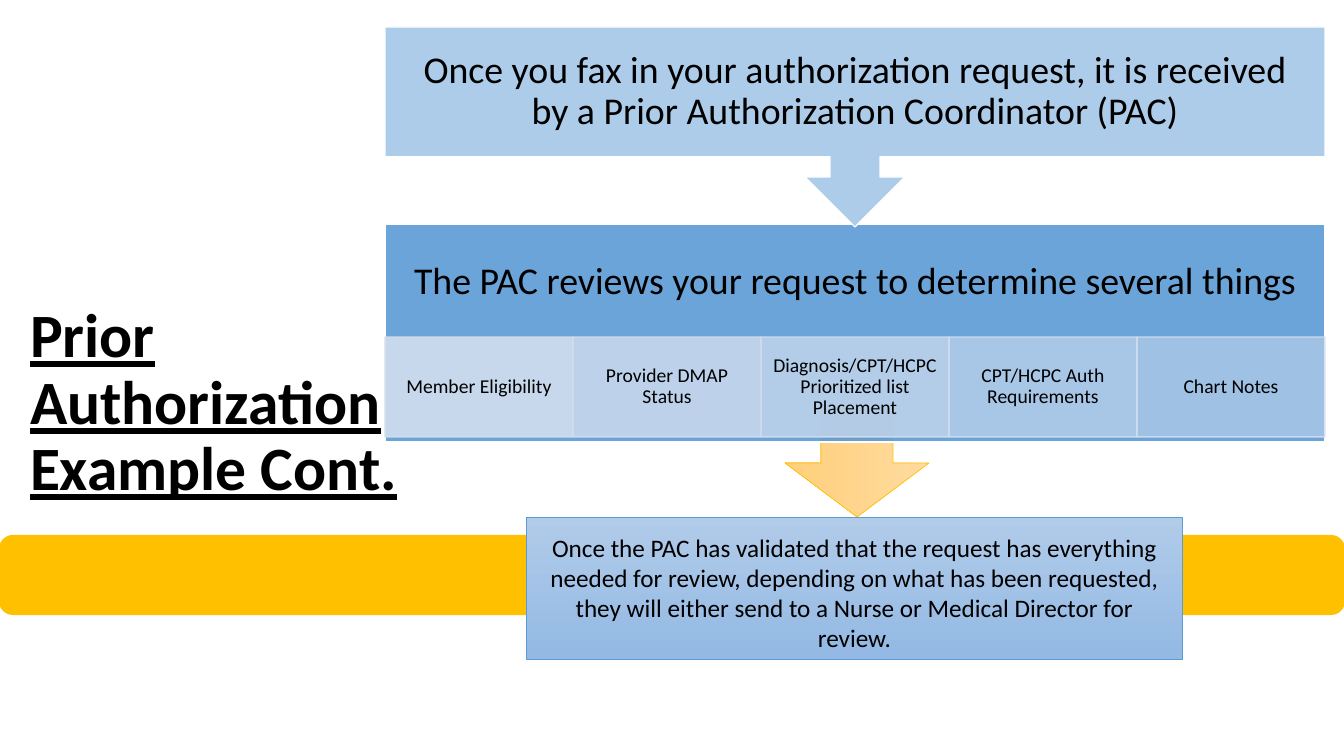
from dataclasses import dataclass

from lxml.etree import SubElement
from pptx import Presentation
from pptx.dml.color import RGBColor
from pptx.enum.shapes import MSO_SHAPE
from pptx.enum.text import MSO_ANCHOR, MSO_AUTO_SIZE, PP_ALIGN
from pptx.oxml.ns import qn
from pptx.util import Pt

EMU_PER_PX = 914400 / 100.8


@dataclass(frozen=True)
class Theme:
    font: str = "Calibri"
    text: str = "000000"
    white: str = "FFFFFF"
    blue: str = "5B9BD5"
    pale_blue: str = "D2DEEF"
    gold: str = "FFC000"
    gold_fade: tuple = ("FFDB9E", "FFD07C")
    blue_fade: tuple = ("B1CBE9", "93B9E4")
    title_size: int = 44
    step_size: int = 27
    outcome_size: int = 18
    check_size: int = 14


THEME = Theme()
CHECKS = [
    "Member Eligibility",
    "Provider DMAP Status",
    "Diagnosis/CPT/HCPC Prioritized list Placement",
    "CPT/HCPC Auth Requirements",
    "Chart Notes",
]
FLOW_LEFT, FLOW_WIDTH = 385, 940


def px(n):
    return round(n * EMU_PER_PX)


def set_color(fill, color, opacity=100):
    fill.solid()
    fill.fore_color.rgb = RGBColor.from_string(color)
    if opacity < 100:
        clr = fill._xPr.find(qn("a:solidFill"))[0]
        SubElement(clr, qn("a:alpha"), val=str(opacity * 1000))


def set_gradient(fill, colors, angle):
    """Fade between two colours; the angle runs counter-clockwise."""
    fill.gradient()
    fill.gradient_angle = angle
    for stop, color in zip(fill.gradient_stops, colors):
        stop.color.rgb = RGBColor.from_string(color)


def add_block(slide, kind, box, line, line_width, fill=None, opacity=100, line_opacity=100):
    sp = slide.shapes.add_shape(kind, *map(px, box))
    sp.shadow.inherit = False
    if fill:
        set_color(sp.fill, fill, opacity)
    set_color(sp.line.fill, line, line_opacity)
    sp.line.width = Pt(line_width)
    return sp


def write(sp, text, size, align=PP_ALIGN.CENTER, spacing=0.9, anchor=MSO_ANCHOR.MIDDLE,
          insets=(10, 5, 10, 5)):
    """Fill a shape with one paragraph; insets are left, top, right, bottom."""
    tf = sp.text_frame
    tf.word_wrap = True
    tf.auto_size = MSO_AUTO_SIZE.NONE
    tf.vertical_anchor = anchor
    tf.margin_left, tf.margin_top, tf.margin_right, tf.margin_bottom = map(px, insets)
    p = tf.paragraphs[0]
    p.text = text
    p.alignment = align
    p.line_spacing = spacing
    p.font.name = THEME.font
    p.font.size = Pt(size)
    p.font.color.rgb = RGBColor.from_string(THEME.text)
    return p


def add_title(slide, text):
    title = slide.shapes.title
    title.left, title.top, title.width, title.height = map(px, (20, 282, 400, 245))
    p = write(title, text, THEME.title_size, align=PP_ALIGN.LEFT)
    p.font.bold = True
    p.font.underline = True


def add_checks(slide):
    width = FLOW_WIDTH // len(CHECKS)
    for i, check in enumerate(CHECKS):
        cell = add_block(slide, MSO_SHAPE.RECTANGLE, (FLOW_LEFT + i * width, 337, width, 100),
                         THEME.pale_blue, 1, THEME.pale_blue, 90 - 10 * i, line_opacity=90)
        write(cell, check, THEME.check_size, insets=(11, 2, 11, 2))


def add_review_step(slide):
    panel = add_block(slide, MSO_SHAPE.RECTANGLE, (FLOW_LEFT, 224, FLOW_WIDTH, 218),
                      THEME.white, 1, THEME.blue, 90)
    write(panel, "The PAC reviews your request to determine several things",
          THEME.step_size, insets=(21, 21, 21, 122))
    add_checks(slide)


def add_fax_step(slide):
    callout = add_block(slide, MSO_SHAPE.DOWN_ARROW_CALLOUT, (FLOW_LEFT, 27, FLOW_WIDTH, 200),
                        THEME.white, 1, THEME.blue, 50)
    write(callout, "Once you fax in your authorization request, it is received "
          "by a Prior Authorization Coordinator (PAC)",
          THEME.step_size, insets=(21, 21, 21, 21))


def add_outcome(slide):
    box = add_block(slide, MSO_SHAPE.RECTANGLE, (526, 517, 656, 142), THEME.blue, 0.5)
    set_gradient(box.fill, THEME.blue_fade, 270)
    write(box, "Once the PAC has validated that the request has everything needed for review, "
          "depending on what has been requested, they will either send to a Nurse or "
          "Medical Director for review.",
          THEME.outcome_size, spacing=1.0, anchor=MSO_ANCHOR.TOP, insets=(19, 15, 18, 5))


def main():
    prs = Presentation()
    prs.slide_width, prs.slide_height = px(1344), px(756)
    slide = prs.slides.add_slide(prs.slide_layouts[5])
    add_title(slide, "Prior Authorization Example Cont.")
    arrow = add_block(slide, MSO_SHAPE.DOWN_ARROW, (785, 409, 144, 108), THEME.gold, 0.5)
    set_gradient(arrow.fill, THEME.gold_fade, 180)
    add_block(slide, MSO_SHAPE.ROUNDED_RECTANGLE, (0, 536, 1344, 78), THEME.gold, 1.5, THEME.gold)
    add_review_step(slide)
    add_fax_step(slide)
    add_outcome(slide)
    prs.save("out.pptx")


if __name__ == "__main__":
    main()
